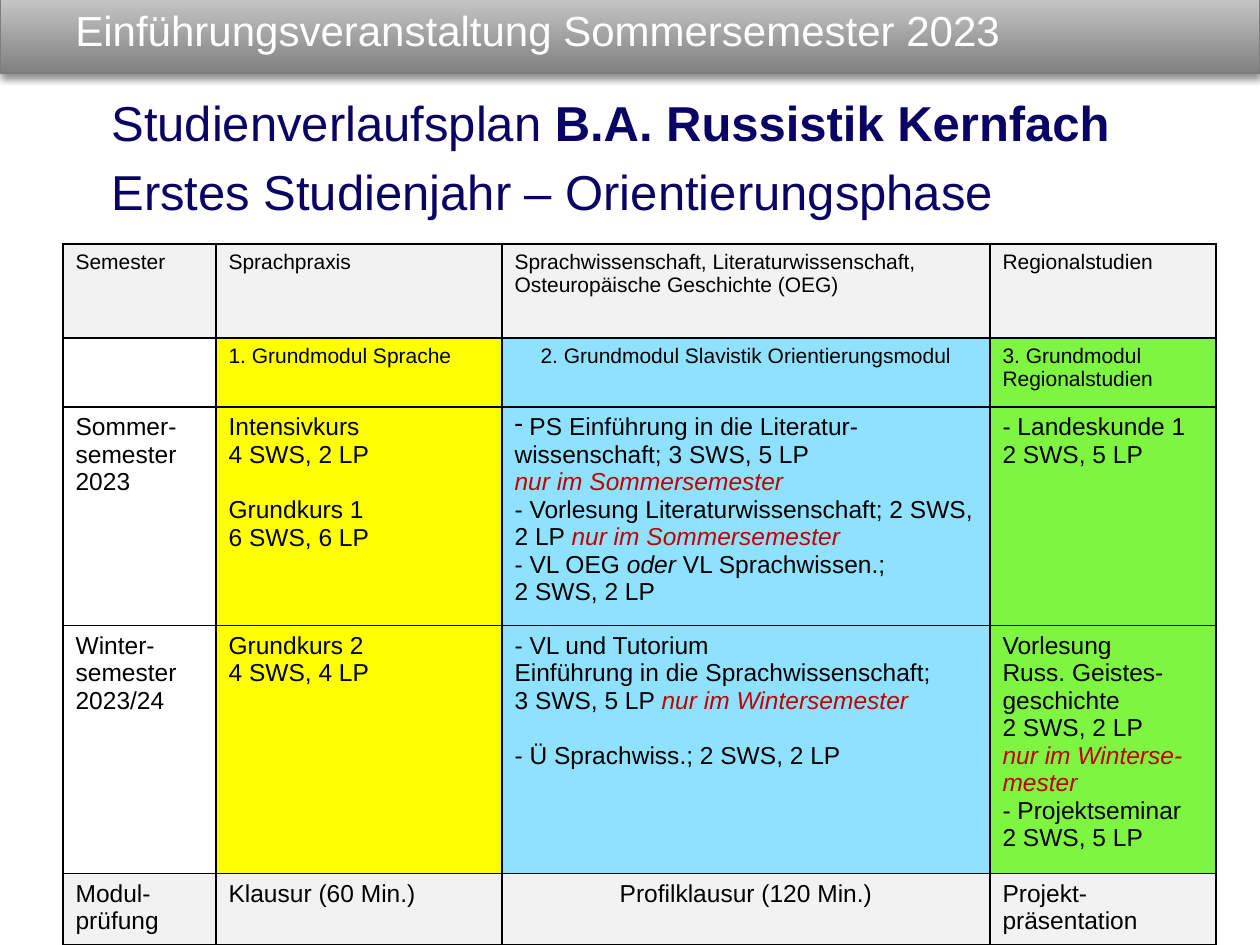
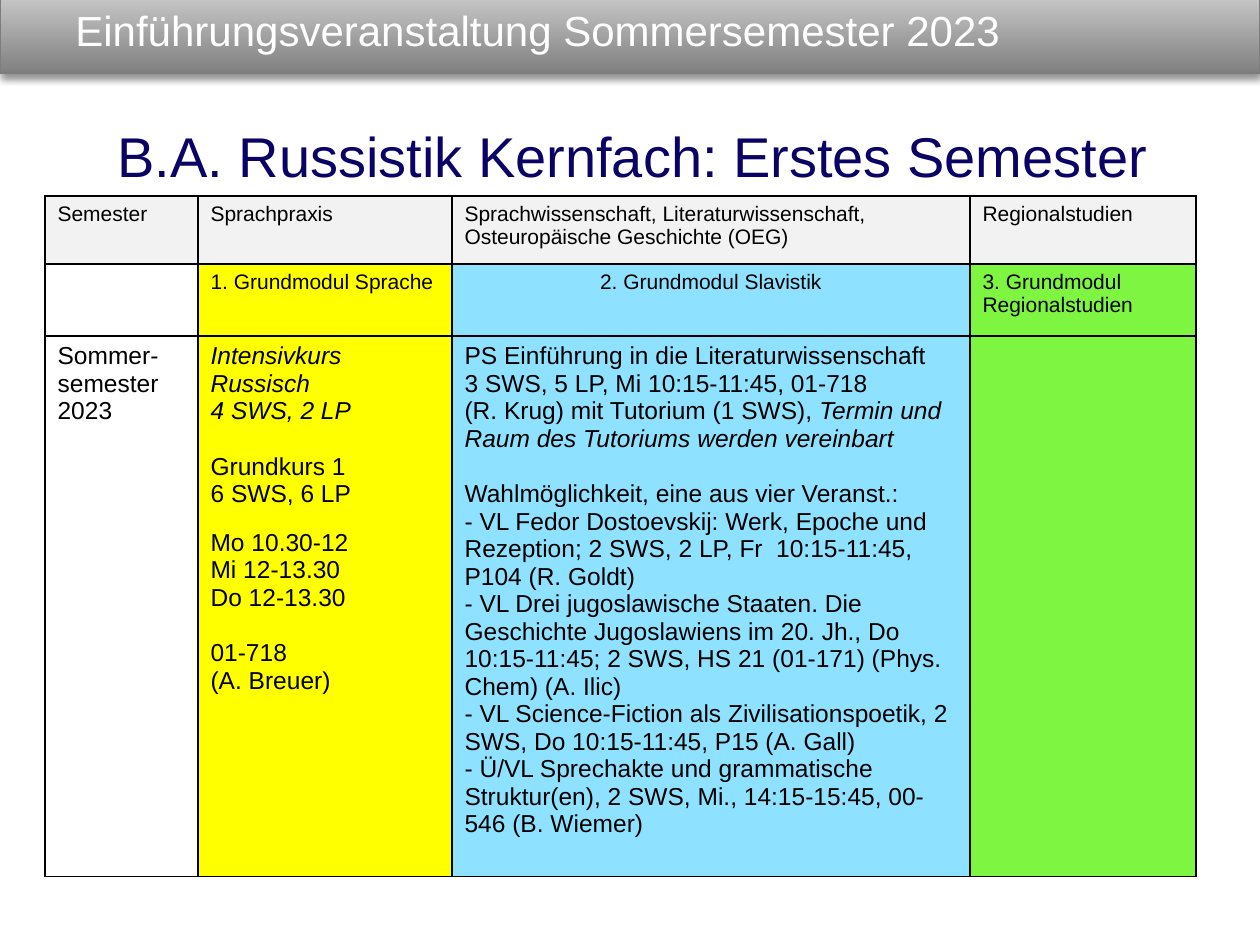
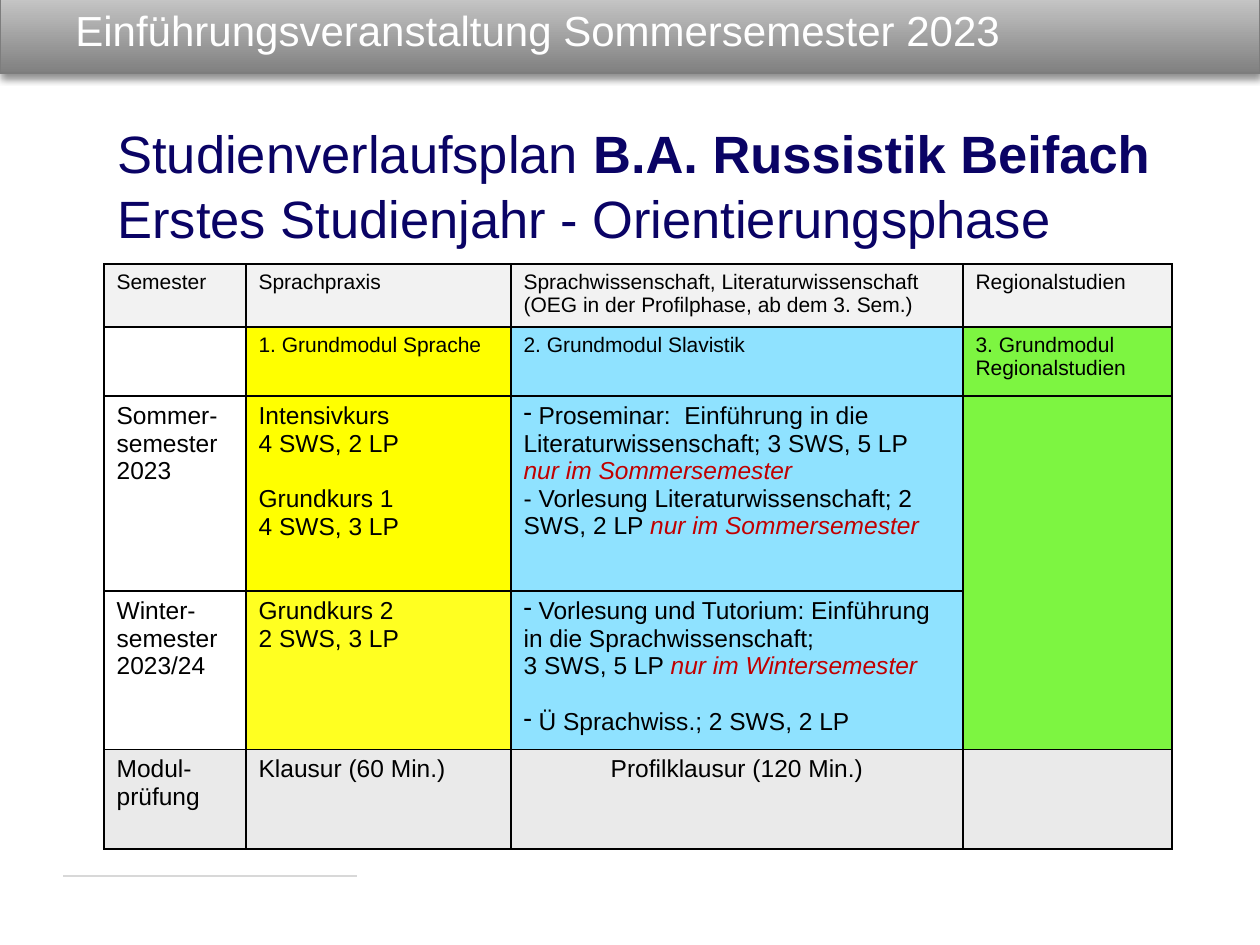
from dataclasses import dataclass

from lxml import etree
from pptx import Presentation
from pptx.dml.color import RGBColor
from pptx.enum.shapes import MSO_CONNECTOR, MSO_SHAPE
from pptx.enum.text import MSO_ANCHOR, PP_ALIGN
from pptx.oxml import parse_xml
from pptx.oxml.ns import nsdecls, qn
from pptx.util import Emu, Pt

RECTANGLE = MSO_SHAPE.RECTANGLE
STRAIGHT = MSO_CONNECTOR.STRAIGHT
TOP, MIDDLE = MSO_ANCHOR.TOP, MSO_ANCHOR.MIDDLE
CENTER = PP_ALIGN.CENTER


@dataclass(frozen=True)
class Theme:
    font: str = "Arial"
    black: str = "000000"
    white: str = "FFFFFF"
    navy: str = "0A0365"
    red: str = "C00000"
    yellow: str = "FFFF00"
    light_yellow: str = "FFFF21"
    blue: str = "8FE2FF"
    green: str = "7DF541"
    pale_grey: str = "F2F2F2"
    exam_grey: str = "EAEAEA"
    band_dark: str = "808080"
    band_light: str = "CDCDCD"
    band_edge: str = "7D7D7D"
    rule: str = "D8D8D8"
    title_size: int = 24
    label_size: int = 12
    body_size: int = 14
    thin: float = 0.75
    grid: float = 1


THEME = Theme()


@dataclass(frozen=True)
class Run:
    text: str
    italic: bool = False
    bold: bool = False
    color: str = ""


@dataclass(frozen=True)
class Para:
    """One paragraph; gap is the space before it in points."""
    runs: tuple
    gap: float = 0
    dash: bool = False
    center: bool = False


@dataclass(frozen=True)
class Row:
    height: int
    cells: tuple
    fills: tuple
    size: int = THEME.body_size


def para(*runs, **options):
    return Para(tuple(Run(r) if isinstance(r, str) else r for r in runs), **options)


def px(length):
    return Emu(round(length * 914400 / 126))


def rgb(code):
    return RGBColor.from_string(code)


def write_text(frame, paragraphs, *, size, color=THEME.black, anchor=TOP):
    """Fill a text frame from strings and Para objects."""
    frame.word_wrap = True
    frame.vertical_anchor = anchor
    for index, entry in enumerate(paragraphs):
        source = para(entry) if isinstance(entry, str) else entry
        line = frame.paragraphs[0] if index == 0 else frame.add_paragraph()
        if source.dash:
            properties = line._p.get_or_add_pPr()
            properties.set("marL", "0")
            properties.set("indent", "0")
            etree.SubElement(properties, qn("a:buChar"), char="-")
        if source.gap:
            line.space_before = Pt(source.gap)
        if source.center:
            line.alignment = CENTER
        for part in source.runs:
            run = line.add_run()
            run.text = part.text
            run.font.name = THEME.font
            run.font.size = Pt(size)
            run.font.bold = part.bold
            run.font.italic = part.italic
            run.font.color.rgb = rgb(part.color or color)


def add_text(slide, box, paragraphs, **text_format):
    frame = slide.shapes.add_textbox(*map(px, box)).text_frame
    write_text(frame, paragraphs, **text_format)


def add_band(slide, box):
    band = slide.shapes.add_shape(RECTANGLE, *map(px, box))
    band.fill.gradient()
    band.fill.gradient_angle = 90
    for stop, color in zip(band.fill.gradient_stops, (THEME.band_dark, THEME.band_light)):
        stop.color.rgb = rgb(color)
    band.line.color.rgb = rgb(THEME.band_edge)
    band.line.width = Pt(THEME.thin)
    band.shadow.inherit = False
    shadow = parse_xml(
        f'<a:outerShdw {nsdecls("a")} blurRad="{Pt(4)}" dist="{Pt(3)}" dir="5400000" rotWithShape="0">'
        f'<a:srgbClr val="{THEME.black}"><a:alpha val="43000"/></a:srgbClr></a:outerShdw>')
    band._element.spPr.find(qn("a:effectLst")).append(shadow)


def add_footer_rule(slide, left, top, width):
    rule = slide.shapes.add_connector(STRAIGHT, px(left), px(top), px(left + width), px(top))
    rule.line.color.rgb = rgb(THEME.rule)
    rule.line.width = Pt(THEME.thin)
    etree.SubElement(rule._element.spPr, qn("a:effectLst"))


def add_frame(presentation):
    """Start a slide with the band, footer rule and title that all slides share."""
    slide = presentation.slides.add_slide(presentation.slide_layouts[6])
    add_band(slide, (0, -10, 1260, 83))
    add_footer_rule(slide, 63, 876, 294)
    add_text(slide, (63, 0, 1168, 59), ["Einführungsveranstaltung Sommersemester 2023"],
             size=THEME.title_size, color=THEME.white, anchor=MIDDLE)
    return slide


def outline_cell(cell):
    properties = cell._tc.get_or_add_tcPr()
    for side in ("lnL", "lnR", "lnT", "lnB"):
        properties.append(parse_xml(
            f'<a:{side} {nsdecls("a")} w="{Pt(THEME.grid)}"><a:solidFill>'
            f'<a:srgbClr val="{THEME.black}"/></a:solidFill></a:{side}>'))


def add_plan(slide, left, top, widths, rows):
    """Place a study plan table and return it."""
    box = (left, top, sum(widths), sum(row.height for row in rows))
    plan = slide.shapes.add_table(len(rows), len(widths), *map(px, box)).table
    plan.first_row = plan.horz_banding = False
    for column, width in zip(plan.columns, widths):
        column.width = px(width)
    for row_index, row in enumerate(rows):
        plan.rows[row_index].height = px(row.height)
        for column_index, (content, fill) in enumerate(zip(row.cells, row.fills)):
            cell = plan.cell(row_index, column_index)
            outline_cell(cell)
            cell.fill.solid()
            cell.fill.fore_color.rgb = rgb(fill)
            write_text(cell.text_frame, content, size=row.size)
    return plan


LINE_GAP, SMALL_GAP = 16, 12
SUMMER_ONLY = Run("nur im Sommersemester", italic=True, color=THEME.red)
WINTER_ONLY = Run("nur im Wintersemester", italic=True, color=THEME.red)
SUMMER, WINTER = ["Sommer-semester 2023"], ["Winter-semester 2023/24"]
EXAM_CELLS = (["Modul-prüfung"], ["Klausur (60 Min.)"],
              [para("Profilklausur (120 Min.)", center=True)])
MODULE_FILLS = (THEME.white, THEME.yellow, THEME.blue, THEME.green)
SUBJECTS = ["Sprachwissenschaft, Literaturwissenschaft, Osteuropäische Geschichte (OEG)"]


def subject_row(height, subjects):
    return Row(height, (["Semester"], ["Sprachpraxis"], subjects, ["Regionalstudien"]),
               (THEME.pale_grey,) * 4, THEME.label_size)


def module_row(height, module, center=True):
    return Row(height, ([], ["1. Grundmodul Sprache"], [para(module, center=center)],
                        ["3. Grundmodul Regionalstudien"]), MODULE_FILLS, THEME.label_size)


def language_courses(basic_load):
    return ["Intensivkurs", "4 SWS, 2 LP", para("Grundkurs 1", gap=LINE_GAP), basic_load]


def core_plan_slide(presentation):
    slide = add_frame(presentation)
    summer_lectures = [
        para(" PS Einführung in die Literatur-wissenschaft; 3 SWS, 5 LP", dash=True),
        para(SUMMER_ONLY),
        para("- Vorlesung Literaturwissenschaft; 2 SWS, 2 LP ", SUMMER_ONLY),
        para("- VL OEG ", Run("oder", italic=True), " VL Sprachwissen.;"),
        "2 SWS, 2 LP",
    ]
    winter_lectures = [
        "- VL und Tutorium", "Einführung in die Sprachwissenschaft;",
        para("3 SWS, 5 LP ", WINTER_ONLY),
        para("- Ü Sprachwiss.; 2 SWS, 2 LP", gap=LINE_GAP),
    ]
    winter_regional = [
        "Vorlesung", "Russ. Geistes-geschichte", "2 SWS, 2 LP",
        para(Run("nur im Winterse-mester", italic=True, color=THEME.red)),
        "- Projektseminar", "2 SWS, 5 LP",
    ]
    add_plan(slide, 63, 244, (153, 286, 488, 226), (
        subject_row(94, SUBJECTS),
        module_row(69, "2. Grundmodul Slavistik Orientierungsmodul"),
        Row(206, (SUMMER, language_courses("6 SWS, 6 LP"), summer_lectures,
                  ["- Landeskunde 1", "2 SWS, 5 LP"]), MODULE_FILLS),
        Row(233, (WINTER, ["Grundkurs 2", "4 SWS, 4 LP"], winter_lectures, winter_regional),
            MODULE_FILLS),
        Row(67, (*EXAM_CELLS, ["Projekt-präsentation"]), (THEME.pale_grey,) * 4),
    ))
    add_text(slide, (99, 86, 1062, 140), [
        para("Studienverlaufsplan ", Run("B.A. Russistik Kernfach", bold=True)),
        para("Erstes Studienjahr – Orientierungsphase", gap=6),
    ], size=28, color=THEME.navy)


def first_semester_slide(presentation):
    slide = add_frame(presentation)
    language = [
        para(Run("Intensivkurs Russisch", italic=True)),
        para(Run("4 SWS, 2 LP", italic=True)),
        para("Grundkurs 1", gap=LINE_GAP), "6 SWS, 6 LP",
        para("Mo 10.30-12", gap=SMALL_GAP), "Mi 12-13.30", "Do 12-13.30",
        para("01-718", gap=LINE_GAP), "(A. Breuer)",
    ]
    lectures = [
        "PS Einführung in die Literaturwissenschaft",
        "3 SWS, 5 LP, Mi 10:15-11:45, 01-718",
        para("(R. Krug) mit Tutorium (1 SWS), ",
             Run("Termin und Raum des Tutoriums werden vereinbart", italic=True)),
        para("Wahlmöglichkeit, eine aus vier Veranst.:", gap=LINE_GAP),
        "- VL Fedor Dostoevskij: Werk, Epoche und Rezeption; 2 SWS, 2 LP, "
        "Fr  10:15-11:45, P104 (R. Goldt)",
        "- VL Drei jugoslawische Staaten. Die Geschichte Jugoslawiens im 20. Jh., "
        "Do 10:15-11:45; 2 SWS, HS 21 (01-171) (Phys. Chem) (A. Ilic)",
        "- VL Science-Fiction als Zivilisationspoetik, 2 SWS, Do 10:15-11:45, P15 (A. Gall)",
        "- Ü/VL Sprechakte und grammatische Struktur(en), 2 SWS, Mi., 14:15-15:45, "
        "00-546 (B. Wiemer)",
    ]
    add_plan(slide, 45, 196, (153, 254, 518, 226), (
        subject_row(68, SUBJECTS),
        module_row(72, "2. Grundmodul Slavistik"),
        Row(525, (SUMMER, language, lectures, []), MODULE_FILLS),
    ))
    add_text(slide, (105, 115, 1062, 81), ["B.A. Russistik Kernfach: Erstes Semester"],
             size=32, color=THEME.navy)


def minor_plan_slide(presentation):
    slide = add_frame(presentation)
    summer_lectures = [
        para(" Proseminar:  Einführung in die Literaturwissenschaft; 3 SWS, 5 LP", dash=True),
        para(SUMMER_ONLY),
        para("- Vorlesung Literaturwissenschaft; 2 SWS, 2 LP ", SUMMER_ONLY),
    ]
    winter_lectures = [
        para(" Vorlesung und Tutorium: Einführung in die Sprachwissenschaft;", dash=True),
        para("3 SWS, 5 LP ", WINTER_ONLY),
        para(" Ü Sprachwiss.; 2 SWS, 2 LP", gap=LINE_GAP, dash=True),
    ]
    plan = add_plan(slide, 104, 264, (142, 265, 452, 209), (
        subject_row(60, ["Sprachwissenschaft, Literaturwissenschaft",
                         "(OEG in der Profilphase, ab dem 3. Sem.)"]),
        module_row(69, "2. Grundmodul Slavistik", center=False),
        Row(195, (SUMMER, language_courses("4 SWS, 3 LP"), summer_lectures, []), MODULE_FILLS),
        Row(152, (WINTER, ["Grundkurs 2", "2 SWS, 3 LP"], winter_lectures, []),
            (THEME.white, THEME.light_yellow, THEME.blue, THEME.green)),
        Row(100, (*EXAM_CELLS, []), (THEME.exam_grey,) * 4),
    ))
    plan.cell(2, 3).merge(plan.cell(3, 3))
    add_text(slide, (105, 115, 1062, 139), [
        para("Studienverlaufsplan ", Run("B.A. Russistik Beifach", bold=True)),
        para("Erstes Studienjahr - Orientierungsphase", gap=1),
    ], size=30, color=THEME.navy)


def main():
    presentation = Presentation()
    presentation.slide_width, presentation.slide_height = px(1260), px(945)
    core_plan_slide(presentation)
    first_semester_slide(presentation)
    minor_plan_slide(presentation)
    presentation.save("out.pptx")


if __name__ == "__main__":
    main()
